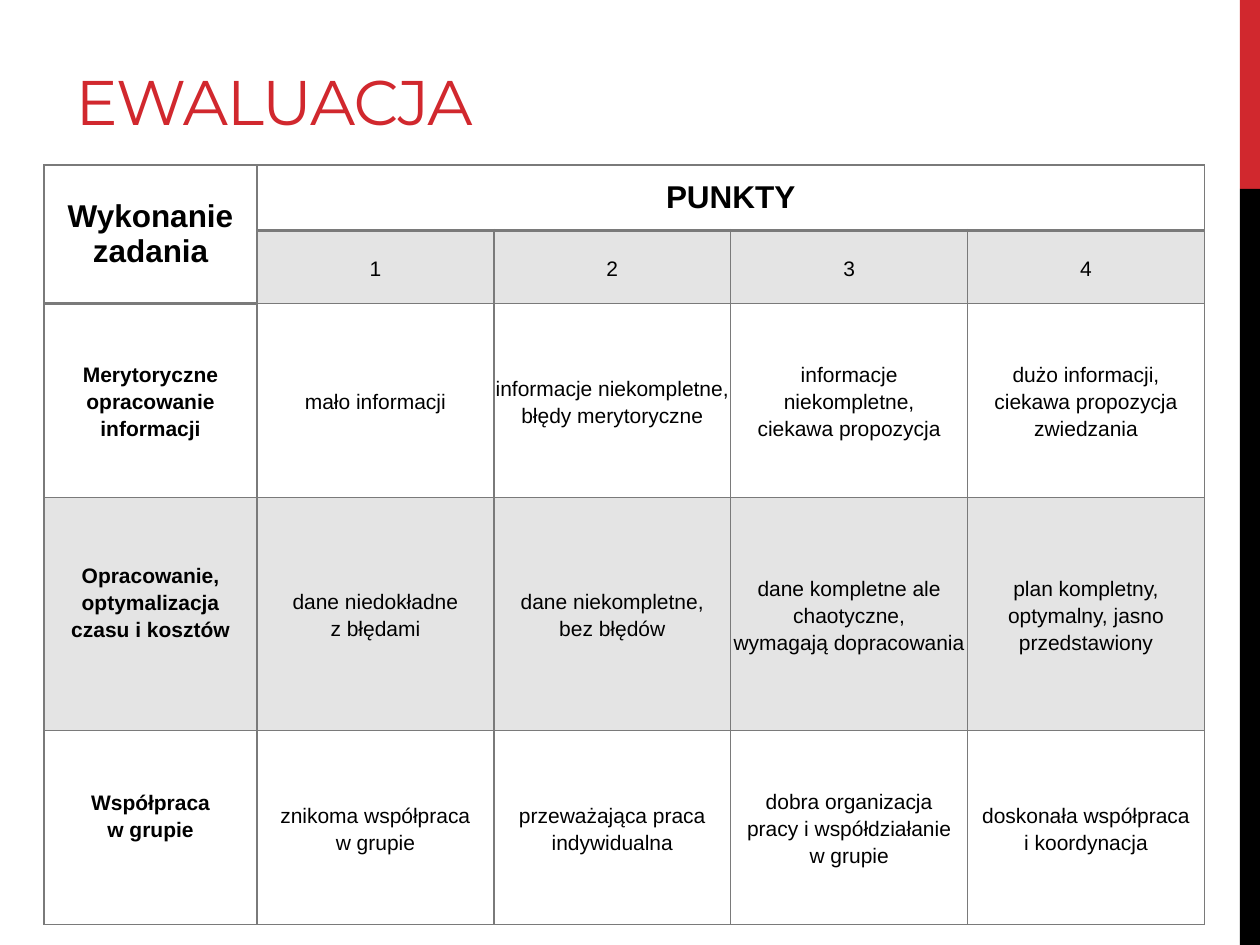
from pptx import Presentation
from pptx.dml.color import RGBColor
from pptx.enum.shapes import MSO_SHAPE
from pptx.enum.text import MSO_ANCHOR, MSO_AUTO_SIZE, PP_ALIGN
from pptx.util import Inches, Pt
from lxml.etree import SubElement
from pptx.oxml.ns import qn

RED = RGBColor(0xD1, 0x28, 0x2E)
BLACK = RGBColor(0, 0, 0)
GRAY = RGBColor(0x7A, 0x7A, 0x7A)

COLS = [1.69] + [1.88] * 4
ROWS = [0.52, 0.58, 1.54, 1.85, 1.54]
SHADED = {(1, col) for col in range(1, 5)} | {(3, col) for col in range(5)}
PAD = 0.01
LIFT = 0.21  # raises the labels of the last two rows by half a line

CELLS = [
    ["Wykonanie zadania", "PUNKTY", "", "", ""],
    ["", "1", "2", "3", "4"],
    ["Merytoryczne opracowanie informacji",
     "mało informacji",
     "informacje niekompletne, błędy merytoryczne",
     "informacje\nniekompletne,\nciekawa propozycja",
     "dużo informacji,\nciekawa propozycja zwiedzania"],
    ["Opracowanie, optymalizacja\nczasu i kosztów",
     "dane niedokładne\nz błędami",
     "dane niekompletne,\nbez błędów",
     "dane kompletne ale chaotyczne,\nwymagają dopracowania",
     "plan kompletny, optymalny, jasno przedstawiony"],
    ["Współpraca\nw grupie",
     "znikoma współpraca\nw grupie",
     "przeważająca praca indywidualna",
     "dobra organizacja\npracy i współdziałanie\nw grupie",
     "doskonała współpraca\ni koordynacja"],
]


def add_bar(slide, box, color):
    bar = slide.shapes.add_shape(MSO_SHAPE.RECTANGLE, *map(Inches, box))
    bar.shadow.inherit = False
    bar.fill.solid()
    bar.fill.fore_color.rgb = color
    bar.line.fill.background()


def set_title(slide, box, text):
    title = slide.shapes.title
    title.left, title.top, title.width, title.height = map(Inches, box)
    frame = title.text_frame
    frame.word_wrap = True
    frame.auto_size = MSO_AUTO_SIZE.NONE
    frame.vertical_anchor = MSO_ANCHOR.BOTTOM
    par = frame.paragraphs[0]
    par.alignment = PP_ALIGN.LEFT
    run = par.add_run()
    run.text = text
    run.font.name, run.font.size = "Montserrat", Pt(36)
    run.font.color.rgb = RED
    run.font._element.set("spc", "-60")


def set_edges(cell, widths):
    props = cell._tc.get_or_add_tcPr()
    for side, width in zip("LRTB", widths):
        line = SubElement(props, qn(f"a:ln{side}"), w=str(Pt(width)))
        fill = SubElement(line, qn("a:solidFill"))
        SubElement(fill, qn("a:srgbClr"), val=str(GRAY))


def set_fill(cell, shaded):
    if not shaded:
        cell.fill.background()
        return
    cell.fill.solid()
    cell.fill.fore_color.rgb = GRAY
    color = cell._tc.tcPr.find(".//" + qn("a:solidFill") + "[last()]/" + qn("a:srgbClr"))
    color = cell._tc.tcPr.find(qn("a:solidFill")).find(qn("a:srgbClr")) if color is None \
        or color.getparent().getparent() is not cell._tc.tcPr else color
    SubElement(color, qn("a:alpha"), val="20000")


def set_text(cell, text, head, bold):
    cell.vertical_anchor = MSO_ANCHOR.MIDDLE
    par = cell.text_frame.paragraphs[0]
    par.alignment = PP_ALIGN.CENTER
    size = Pt(18 if head else 12)
    par.font.size = size
    if not head:
        par.line_spacing = 1.15
    for num, part in enumerate(text.split("\n") if text else []):
        if num:
            par.add_line_break()
        run = par.add_run()
        run.text = part
        run.font.name, run.font.size, run.font.bold = "Arial", size, bold
        run.font.color.rgb = BLACK


def add_grid(slide, box):
    frame = slide.shapes.add_table(len(ROWS), len(COLS), *map(Inches, box))
    table = frame.table
    table.first_row = table.horz_banding = False
    for col, width in zip(table.columns, COLS):
        col.width = Inches(width)
    for row, height in zip(table.rows, ROWS):
        row.height = Inches(height)

    for r, texts in enumerate(CELLS):
        for c, text in enumerate(texts):
            cell = table.cell(r, c)
            cell.margin_left = cell.margin_right = cell.margin_top = Inches(PAD)
            lift = LIFT if c == 0 and r > 2 else 0
            cell.margin_bottom = Inches(PAD + lift)
            # The header cells have a thick lower edge
            top = 2 if (r == 1 and c) or (r == 2 and c == 0) else 1
            low = 2 if r == 0 or (r == 1 and c == 0) else 1
            set_edges(cell, (1, 1, top, low))
            set_fill(cell, (r, c) in SHADED)
            set_text(cell, text, r == 0, r == 0 or c == 0)

    table.cell(0, 0).merge(table.cell(1, 0))
    table.cell(0, 1).merge(table.cell(0, 4))


def main():
    deck = Presentation()
    deck.slide_width, deck.slide_height = Inches(10), Inches(7.5)
    slide = deck.slides.add_slide(deck.slide_layouts[5])
    # Side bars
    add_bar(slide, (9.84, 0, 0.16, 1.5), RED)
    add_bar(slide, (9.84, 1.5, 0.16, 6), BLACK)
    # Title and scoring table
    set_title(slide, (0.5, 0.17, 6.33, 0.98), "EWALUACJA")
    add_grid(slide, (0.35, 1.31, sum(COLS), sum(ROWS)))
    deck.save("out.pptx")


if __name__ == "__main__":
    main()
